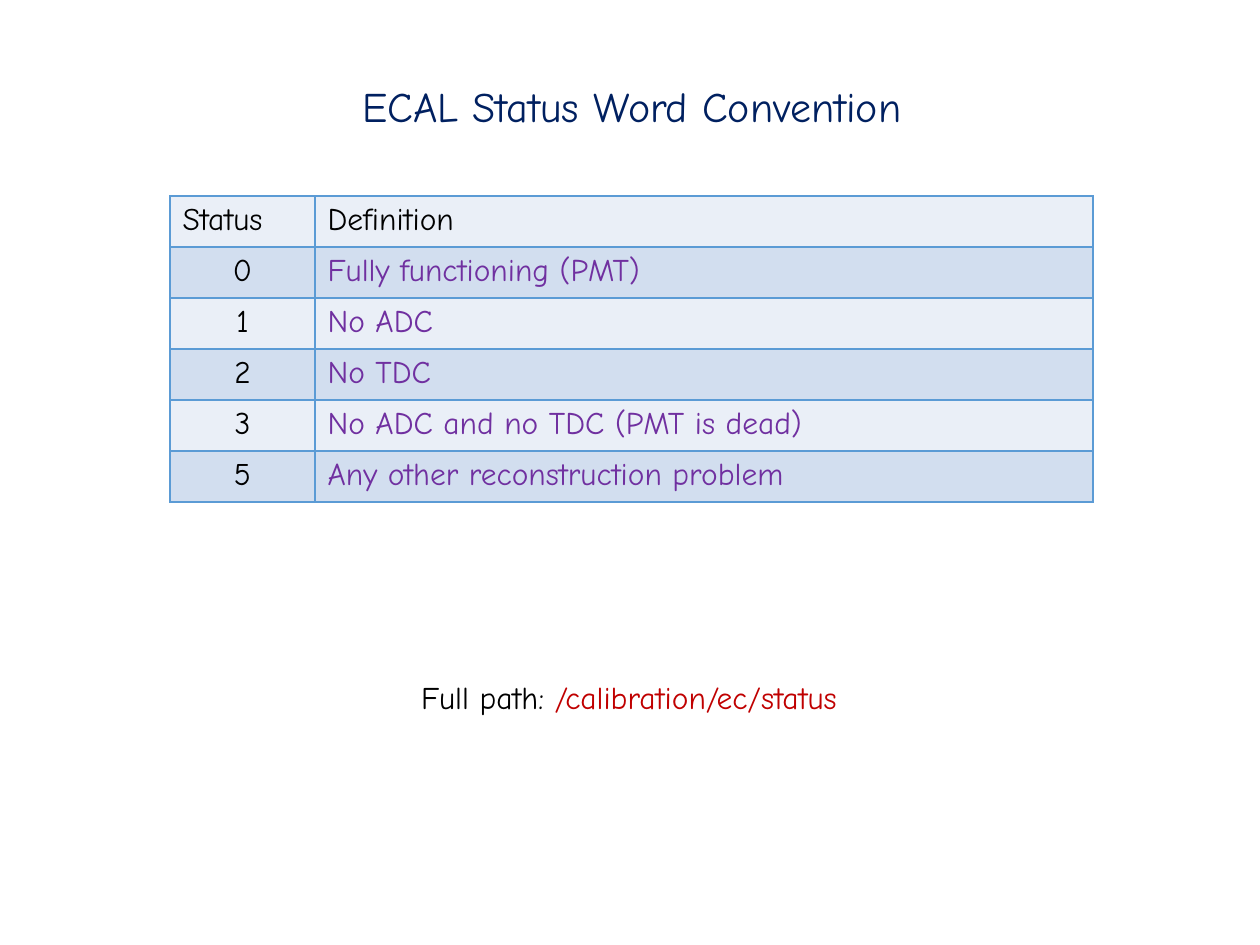
"""Build the ECAL status word convention slide."""
import dataclasses

import lxml.etree
import pptx
import pptx.dml.color
import pptx.enum.text
import pptx.oxml.ns
import pptx.util

PX_PER_INCH = 126
FONT = "Comic Neue"
COLORS = {
    "title": "002060",
    "text": "000000",
    "definition": "7030A0",
    "location": "C00000",
    "border": "5B9BD5",
    "light": "EAEFF7",
    "dark": "D2DEEF",
}
CENTER = pptx.enum.text.PP_ALIGN.CENTER
LEFT = pptx.enum.text.PP_ALIGN.LEFT
COLUMN_WIDTHS = (145, 778)
ROW_HEIGHT = 51


@dataclasses.dataclass(frozen=True)
class Box:
    left: int
    top: int
    width: int
    height: int

    def lengths(self) -> tuple:
        return tuple(map(px, (self.left, self.top, self.width, self.height)))


@dataclasses.dataclass(frozen=True)
class Status:
    code: str
    definition: str


STATUSES = (
    Status("0", "Fully functioning (PMT)"),
    Status("1", "No ADC"),
    Status("2", "No TDC"),
    Status("3", "No ADC and no TDC (PMT is dead)"),
    Status("5", "Any other reconstruction problem"),
)


def px(length: int) -> pptx.util.Emu:
    return pptx.util.Emu(round(length * pptx.util.Inches(1) / PX_PER_INCH))


def format_span(span, color: str, size: int = 18) -> None:
    span.font.name = FONT
    span.font.size = pptx.util.Pt(size)
    span.font.color.rgb = pptx.dml.color.RGBColor.from_string(COLORS[color])


def add_borders(cell) -> None:
    properties = cell._tc.get_or_add_tcPr()
    for side in ("lnL", "lnR", "lnT", "lnB"):
        line = lxml.etree.SubElement(
            properties, pptx.oxml.ns.qn(f"a:{side}"), w=str(pptx.util.Pt(1))
        )
        fill = lxml.etree.SubElement(line, pptx.oxml.ns.qn("a:solidFill"))
        lxml.etree.SubElement(
            fill, pptx.oxml.ns.qn("a:srgbClr"), val=COLORS["border"]
        )


def fill_cell(cell, text: str, color: str, band: str, alignment) -> None:
    add_borders(cell)
    cell.fill.solid()
    cell.fill.fore_color.rgb = pptx.dml.color.RGBColor.from_string(COLORS[band])
    para = cell.text_frame.paragraphs[0]
    para.text = text
    para.alignment = alignment
    format_span(para.runs[0], color)


def add_title(page, text: str, box: Box) -> None:
    title = page.shapes.title
    title.left, title.top, title.width, title.height = box.lengths()
    title.text_frame.text = text
    title.text_frame.auto_size = pptx.enum.text.MSO_AUTO_SIZE.NONE
    title.text_frame.vertical_anchor = pptx.enum.text.MSO_ANCHOR.TOP
    para = title.text_frame.paragraphs[0]
    para.alignment = CENTER
    format_span(para.runs[0], "title", 24)


def add_status_table(page, statuses: tuple, left: int, top: int) -> None:
    row_count = len(statuses) + 1
    box = Box(left, top, sum(COLUMN_WIDTHS), ROW_HEIGHT * row_count)
    table = page.shapes.add_table(
        row_count, len(COLUMN_WIDTHS), *box.lengths()
    ).table
    for column, width in zip(table.columns, COLUMN_WIDTHS):
        column.width = px(width)
    for row in table.rows:
        row.height = px(ROW_HEIGHT)
    for index, heading in enumerate(("Status", "Definition")):
        fill_cell(table.cell(0, index), heading, "text", "light", LEFT)
    for index, status in enumerate(statuses, start=1):
        band = "dark" if index % 2 else "light"
        fill_cell(table.cell(index, 0), status.code, "text", band, CENTER)
        fill_cell(
            table.cell(index, 1), status.definition, "definition", band, LEFT
        )


def add_location(page, label: str, location: str, box: Box) -> None:
    frame = page.shapes.add_textbox(*box.lengths()).text_frame
    frame.word_wrap = True
    para = frame.paragraphs[0]
    para.alignment = CENTER
    for text, color in ((label, "text"), (location, "location")):
        span = para.add_run()
        span.text = text
        format_span(span, color)


def main() -> None:
    deck = pptx.Presentation()
    deck.slide_width = px(1260)
    deck.slide_height = px(945)
    page = deck.slides.add_slide(deck.slide_layouts.get_by_name("Title Only"))
    add_title(page, "ECAL Status Word Convention", Box(198, 74, 868, 63))
    add_status_table(page, STATUSES, 170, 196)
    add_location(
        page, "Full path: ", "/calibration/ec/status", Box(352, 672, 554, 50)
    )
    deck.save("out.pptx")


if __name__ == "__main__":
    main()
